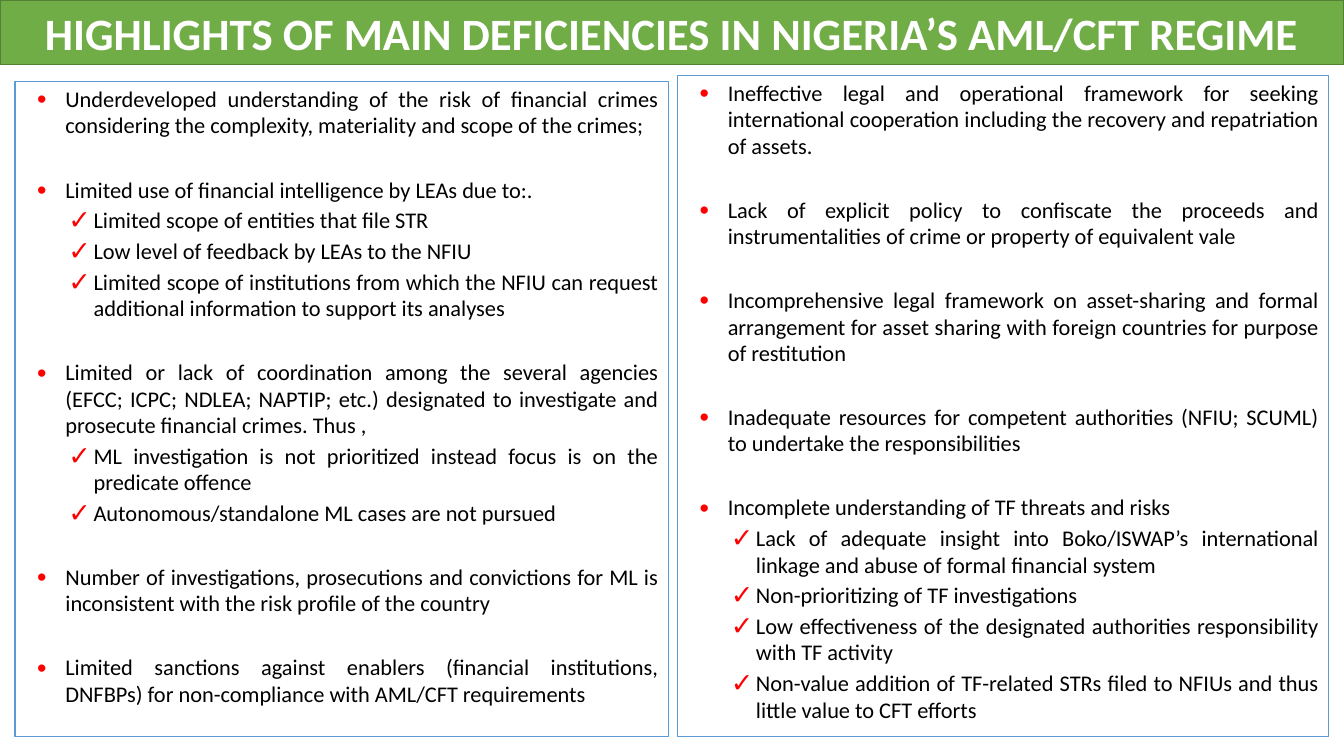
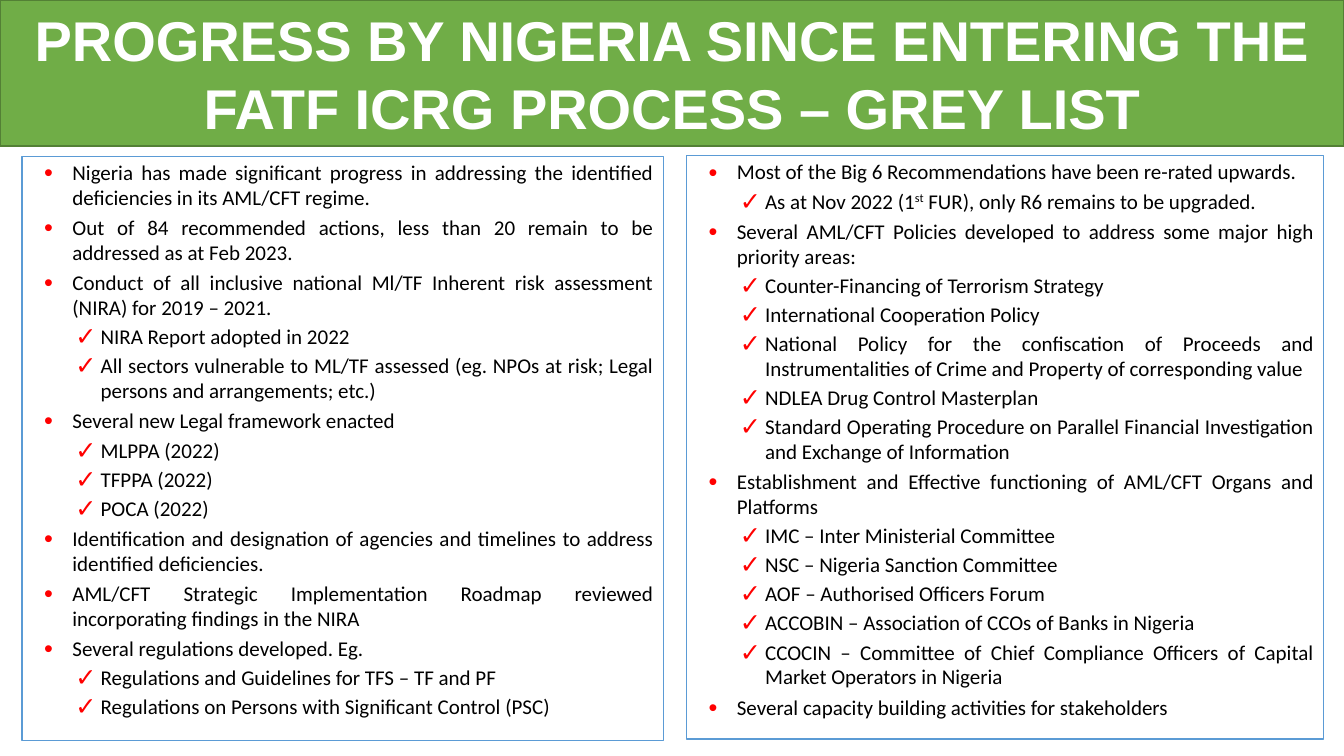
"""Build two slides on deficiencies and progress in the AML/CFT regime of Nigeria."""
import dataclasses

import lxml.etree
import pptx
import pptx.dml.color
import pptx.enum.shapes
import pptx.enum.text
import pptx.oxml.ns
import pptx.util


@dataclasses.dataclass(frozen=True)
class Theme:
    """Colours, fonts and type sizes shared by the slides."""

    band: str = "70AD47"
    band_line: str = "538035"
    panel: str = "FFFFFF"
    panel_line: str = "5B9BD5"
    title: str = "FFFFFF"
    body: str = "000000"
    bullet: str = "FF0000"
    body_font: str = "Calibri"
    bullet_font: str = "Arial"
    bullet_percent: int = 120
    line_width: float = 1
    line_spacing: float = 0.98


@dataclasses.dataclass(frozen=True)
class Level:
    """Bullet character, indents in inches and space before in points."""

    mark: str
    margin: float
    indent: float
    space: float


THEME = Theme()
WIDTH, HEIGHT = 13.33, 7.5
POINT = Level("•", 0.4, -0.28, 4)
DETAIL = Level("✓", 0.68, -0.25, 3.2)

SLIDES = [
    {
        "title": "HIGHLIGHTS OF MAIN DEFICIENCIES IN NIGERIA’S AML/CFT REGIME",
        "title_font": "Calibri",
        "title_size": 32,
        "band_height": 0.64,
        "body_size": 16,
        "point_gap": 23,
        "panels": [
            ((0.15, 0.81, 6.48, 6.5), [
                ("Underdeveloped understanding of the risk of financial crimes considering "
                 "the complexity, materiality and scope of the crimes;", []),
                ("Limited use of financial intelligence by LEAs due to:.", [
                    "Limited scope of entities that file STR",
                    "Low level of feedback by LEAs to the NFIU",
                    "Limited scope of institutions from which the NFIU can request "
                    "additional information to support its analyses",
                ]),
                ("Limited or lack of coordination among the several agencies (EFCC; ICPC; "
                 "NDLEA; NAPTIP; etc.) designated to investigate and prosecute financial "
                 "crimes. Thus ,", [
                     "ML investigation is not prioritized instead focus is on the "
                     "predicate offence",
                     "Autonomous/standalone ML cases are not pursued",
                 ]),
                ("Number of investigations, prosecutions and convictions for ML is "
                 "inconsistent with the risk profile of the country", []),
                ("Limited sanctions against enablers (financial institutions, DNFBPs) for "
                 "non-compliance with AML/CFT requirements", []),
            ]),
            ((6.72, 0.75, 6.46, 6.56), [
                ("Ineffective legal and operational framework for seeking international "
                 "cooperation including the recovery and repatriation of assets.", []),
                ("Lack of explicit policy to confiscate the proceeds and instrumentalities "
                 "of crime or property of equivalent vale", []),
                ("Incomprehensive legal framework on asset-sharing and formal arrangement "
                 "for asset sharing with foreign countries for purpose of restitution", []),
                ("Inadequate resources for competent authorities (NFIU; SCUML) to undertake "
                 "the responsibilities", []),
                ("Incomplete understanding of TF threats and risks", [
                    "Lack of adequate insight into Boko/ISWAP’s international linkage and "
                    "abuse of formal financial system",
                    "Non-prioritizing of TF investigations",
                    "Low effectiveness of the designated authorities responsibility with "
                    "TF activity",
                    "Non-value addition of TF-related STRs filed to NFIUs and thus little "
                    "value to CFT efforts",
                ]),
            ]),
        ],
    },
    {
        "title": "PROGRESS BY NIGERIA SINCE ENTERING THE FATF ICRG PROCESS – GREY LIST",
        "title_font": "Arial",
        "title_size": 40,
        "band_height": 1.45,
        "body_size": 15,
        "point_gap": 0,
        "panels": [
            ((0.22, 1.55, 6.36, 5.8), [
                ("Nigeria has made significant progress in addressing the identified "
                 "deficiencies in its AML/CFT regime.", []),
                ("Out of 84 recommended actions, less than 20 remain to be addressed as at "
                 "Feb 2023.", []),
                ("Conduct of all inclusive national Ml/TF Inherent risk assessment (NIRA) "
                 "for 2019 – 2021.", [
                     "NIRA Report adopted in 2022",
                     "All sectors vulnerable to ML/TF assessed (eg. NPOs at risk; Legal "
                     "persons and arrangements; etc.)",
                 ]),
                ("Several new Legal framework enacted", [
                    "MLPPA (2022)",
                    "TFPPA (2022)",
                    "POCA (2022)",
                ]),
                ("Identification and designation of agencies and timelines to address "
                 "identified deficiencies.", []),
                ("AML/CFT Strategic Implementation Roadmap reviewed incorporating findings "
                 "in the NIRA", []),
                ("Several regulations developed. Eg.", [
                    "Regulations and Guidelines for TFS – TF and PF",
                    "Regulations on Persons with Significant Control (PSC)",
                ]),
            ]),
            ((6.81, 1.54, 6.32, 5.79), [
                ("Most of the Big 6 Recommendations have been re-rated upwards.", [
                    "As at Nov 2022 (1^st^ FUR), only R6 remains to be upgraded.",
                ]),
                ("Several AML/CFT Policies developed to address some major high priority "
                 "areas:", [
                     "Counter-Financing of Terrorism Strategy",
                     "International Cooperation Policy",
                     "National Policy for the confiscation of Proceeds and Instrumentalities "
                     "of Crime and Property of corresponding value",
                     "NDLEA Drug Control Masterplan",
                     "Standard Operating Procedure on Parallel Financial Investigation and "
                     "Exchange of Information",
                 ]),
                ("Establishment and Effective functioning of AML/CFT Organs and Platforms", [
                    "IMC – Inter Ministerial Committee",
                    "NSC – Nigeria Sanction Committee",
                    "AOF – Authorised Officers Forum",
                    "ACCOBIN – Association of CCOs of Banks in Nigeria",
                    "CCOCIN – Committee of Chief Compliance Officers of Capital Market "
                    "Operators in Nigeria",
                ]),
                ("Several capacity building activities for stakeholders", []),
            ]),
        ],
    },
]


def rgb(value):
    return pptx.dml.color.RGBColor.from_string(value)


def add_box(page, place, fill, line, anchor):
    box = page.shapes.add_shape(
        pptx.enum.shapes.MSO_SHAPE.RECTANGLE, *(pptx.util.Inches(side) for side in place))
    box.shadow.inherit = False
    box.fill.solid()
    box.fill.fore_color.rgb = rgb(fill)
    box.line.color.rgb = rgb(line)
    box.line.width = pptx.util.Pt(THEME.line_width)
    box.text_frame.word_wrap = True
    box.text_frame.vertical_anchor = anchor
    return box.text_frame


def set_font(para, name, size, colour, bold=False):
    para.font.name = name
    para.font.size = pptx.util.Pt(size)
    para.font.color.rgb = rgb(colour)
    para.font.bold = bold


def add_spans(para, text):
    for index, part in enumerate(text.split("^")):
        span = para.add_run()
        span.text = part
        if index % 2:
            span.font._element.set("baseline", "30000")


def set_bullet(para, level):
    properties = para._p.get_or_add_pPr()
    properties.set("marL", str(pptx.util.Inches(level.margin)))
    properties.set("indent", str(pptx.util.Inches(level.indent)))

    def add(parent, tag, **attributes):
        return lxml.etree.SubElement(parent, pptx.oxml.ns.qn(tag), attributes)

    add(add(properties, "a:buClr"), "a:srgbClr", val=THEME.bullet)
    add(properties, "a:buSzPct", val=str(THEME.bullet_percent * 1000))
    add(properties, "a:buFont", typeface=THEME.bullet_font)
    add(properties, "a:buChar", char=level.mark)


def add_title(page, content):
    frame = add_box(page, (0, 0, WIDTH, content["band_height"]), THEME.band,
                    THEME.band_line, pptx.enum.text.MSO_ANCHOR.MIDDLE)
    para = frame.paragraphs[0]
    para.alignment = pptx.enum.text.PP_ALIGN.CENTER
    add_spans(para, content["title"])
    set_font(para, content["title_font"], content["title_size"], THEME.title, True)


def add_panel(page, place, points, size, point_gap):
    frame = add_box(page, place, THEME.panel, THEME.panel_line,
                    pptx.enum.text.MSO_ANCHOR.TOP)
    rows = [row for point, details in points
            for row in [(POINT, point), *((DETAIL, detail) for detail in details)]]
    for index, (level, text) in enumerate(rows):
        para = frame.add_paragraph() if index else frame.paragraphs[0]
        para.level = int(level is DETAIL)
        para.alignment = pptx.enum.text.PP_ALIGN.JUSTIFY
        para.line_spacing = THEME.line_spacing
        gap = level.space + (point_gap if level is POINT else 0)
        para.space_before = pptx.util.Pt(gap if index else 0)
        set_bullet(para, level)
        add_spans(para, text)
        set_font(para, THEME.body_font, size, THEME.body)


def main():
    deck = pptx.Presentation()
    deck.slide_width = pptx.util.Inches(WIDTH)
    deck.slide_height = pptx.util.Inches(HEIGHT)
    for content in SLIDES:
        page = deck.slides.add_slide(deck.slide_layouts[6])
        add_title(page, content)
        for place, points in content["panels"]:
            add_panel(page, place, points, content["body_size"], content["point_gap"])
    deck.save("out.pptx")


if __name__ == "__main__":
    main()
